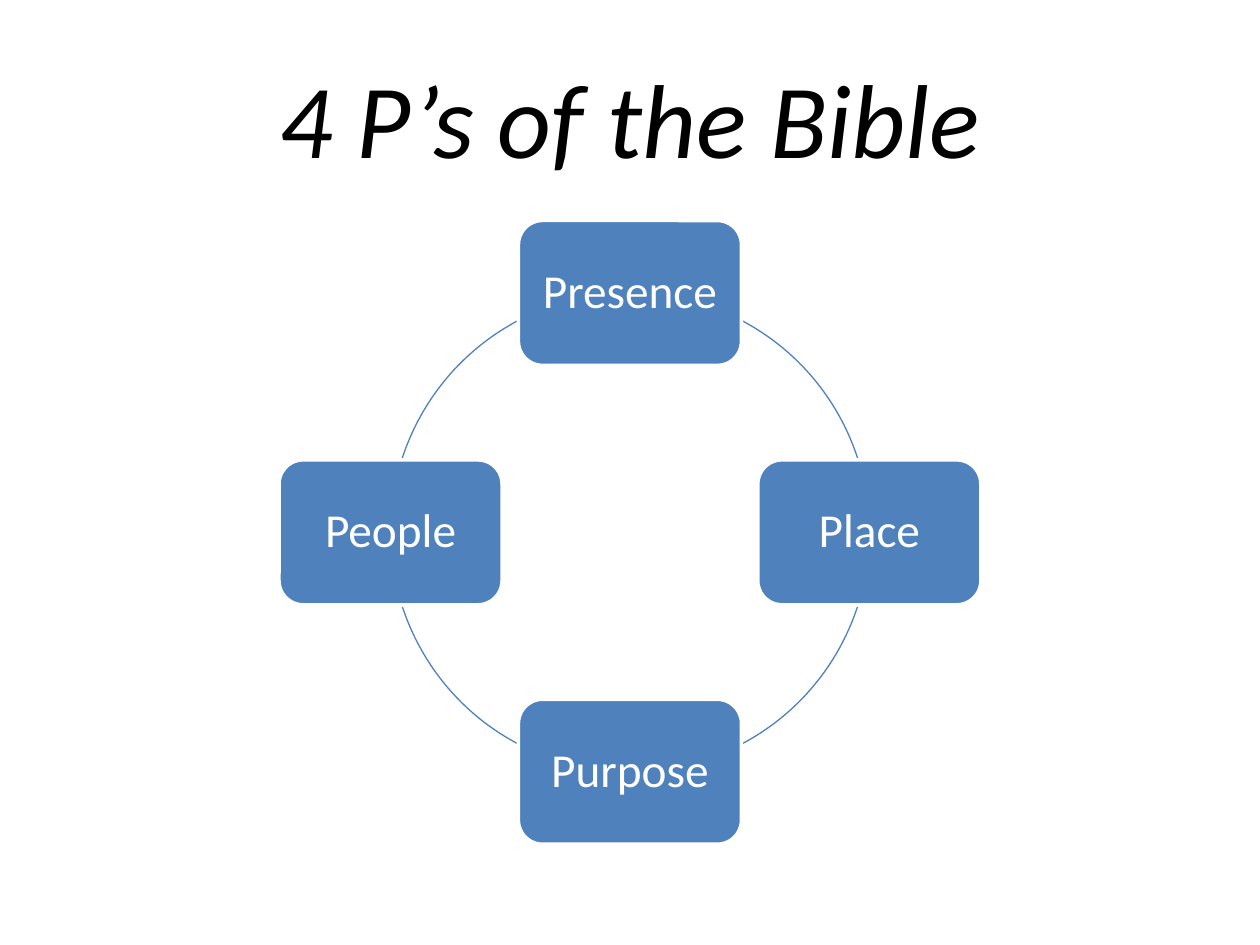
from math import cos, radians, sin

from pptx import Presentation
from pptx.dml.color import RGBColor
from pptx.enum.shapes import MSO_SHAPE
from pptx.enum.text import MSO_ANCHOR, PP_ALIGN
from pptx.util import Inches, Pt

ROUND, ARC = MSO_SHAPE.ROUNDED_RECTANGLE, MSO_SHAPE.ARC
MIDDLE, CENTER = MSO_ANCHOR.MIDDLE, PP_ALIGN.CENTER
COLORS = {"blue": "4F81BD", "white": "FFFFFF", "black": "000000"}
FONT = "Calibri"
WIDE, HIGH = 10, 7.5
NODES = ["Presence", "Place", "Purpose", "People"]  # clockwise from the top
ARCS = [-40, 40, 140, 220]  # middle angle of each arc, clockwise from the right
HALF = 21.9  # half the sweep of an arc, in degrees


def color(name):
    return RGBColor.from_string(COLORS[name])


def write(shape, text, size, ink, italic=False):
    frame = shape.text_frame
    frame.word_wrap = True
    frame.vertical_anchor = MIDDLE
    line = frame.paragraphs[0]
    line.text = text
    line.alignment = CENTER
    font = line.font
    font.name, font.size, font.italic = FONT, Pt(size), italic
    font.color.rgb = color(ink)
    return line


def add_title(slide, box, text):
    shape = slide.shapes.add_textbox(*map(Inches, box))
    write(shape, text, 60, "black", italic=True)


def add_node(slide, box, text):
    node = slide.shapes.add_shape(ROUND, *map(Inches, box))
    node.shadow.inherit = False
    node.fill.solid()
    node.fill.fore_color.rgb = color("blue")
    node.line.color.rgb = color("white")
    node.line.width = Pt(2)
    frame = node.text_frame
    frame.margin_left = frame.margin_right = Inches(0.05)
    write(node, text, 27, "white").line_spacing = 0.9


def add_arc(slide, box, angle):
    arc = slide.shapes.add_shape(ARC, *map(Inches, box))
    arc.shadow.inherit = False
    arc.fill.background()
    arc.line.color.rgb = color("blue")
    arc.line.width = Pt(0.75)
    for i, end in enumerate((angle - HALF, angle + HALF)):
        arc.adjustments[i] = end % 360 * 0.6  # 60000 units a degree, over 100000


def add_cycle(slide, box, names):
    """Set the names around a ring that fits the box, with arcs between them."""
    left, top, width, height = box
    wide, high = 1.77, 1.15
    ring = height - high
    mid_x, mid_y = left + width / 2, top + height / 2
    for angle in ARCS:
        add_arc(slide, (mid_x - ring / 2, mid_y - ring / 2, ring, ring), angle)
    for i, name in enumerate(names):
        turn = radians(360 * i / len(names) - 90)
        x = mid_x + ring / 2 * cos(turn) - wide / 2
        y = mid_y + ring / 2 * sin(turn) - high / 2
        add_node(slide, (x, y, wide, high), name)


def main():
    deck = Presentation()
    deck.slide_width, deck.slide_height = Inches(WIDE), Inches(HIGH)
    slide = deck.slides.add_slide(deck.slide_layouts[6])
    edge = WIDE * 0.05
    add_title(slide, (edge, HIGH * 0.04, WIDE - 2 * edge, HIGH / 6),
              "4 P’s of the Bible")
    add_cycle(slide, (edge, 1.75, WIDE - 2 * edge, HIGH * 0.66), NODES)
    deck.save("out.pptx")


if __name__ == "__main__":
    main()
